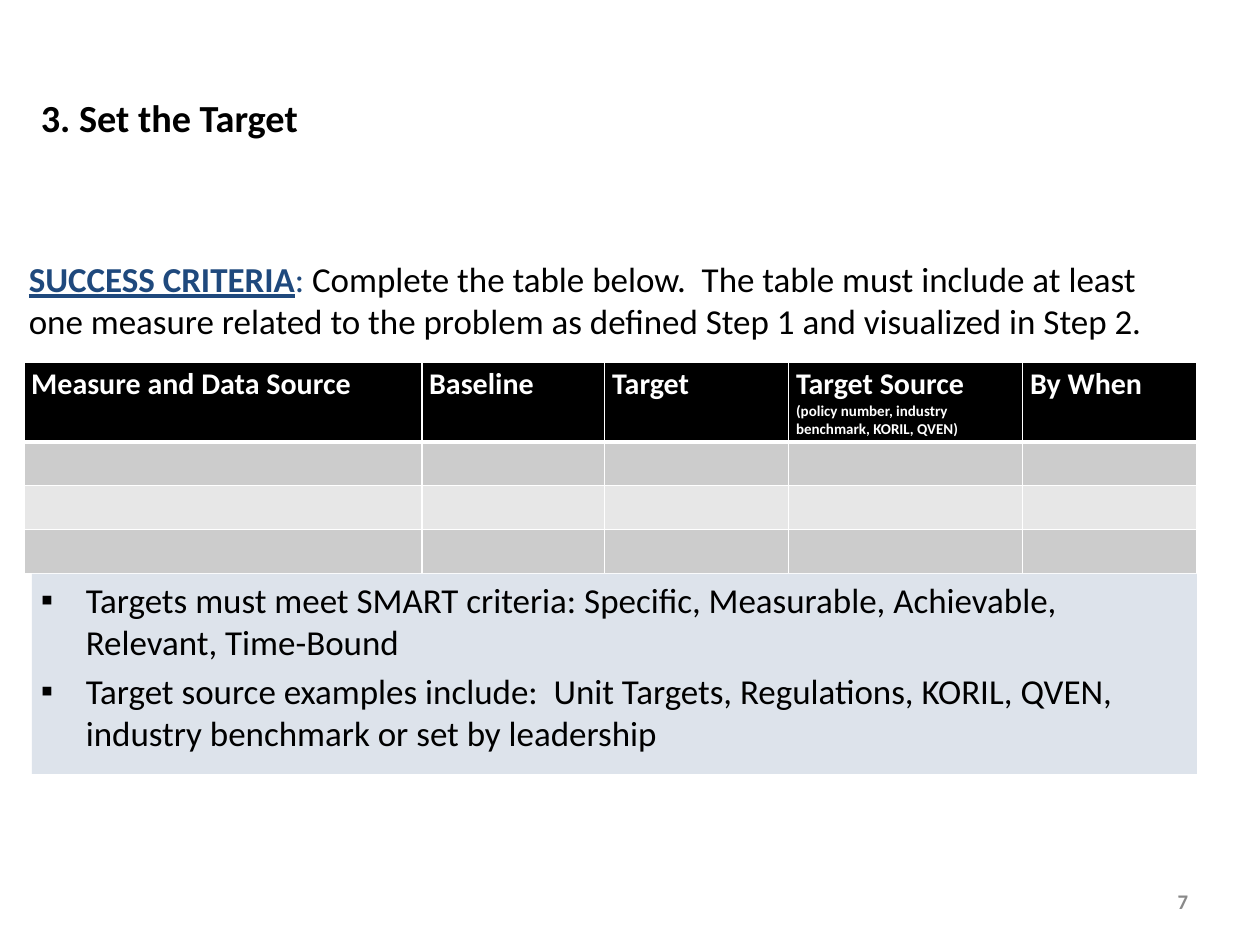
from lxml import etree
from pptx import Presentation
from pptx.dml.color import RGBColor
from pptx.enum import shapes, text
from pptx.oxml import ns
from pptx import util as u

PX = 914400 // 90
FONT = "Calibri"
BLACK = RGBColor(0x00, 0x00, 0x00)
WHITE = RGBColor(0xFF, 0xFF, 0xFF)
NAVY = RGBColor(0x1F, 0x49, 0x7D)
GREY = RGBColor(0x89, 0x89, 0x89)
DARK_BAND = RGBColor(0xCC, 0xCC, 0xCC)
LIGHT_BAND = RGBColor(0xE7, 0xE7, 0xE7)

HEADERS = [["Measure and Data Source"], ["Baseline"], ["Target"],
           ["Target Source", "(policy number, industry benchmark, KORIL, QVEN)"],
           ["By When"]]
COLUMNS = [398, 183, 184, 234, 174]
ROWS = [80, 44, 44, 44]
NOTES = ["Targets must meet SMART criteria: Specific, Measurable, Achievable, "
         "Relevant, Time-Bound",
         "Target source examples include:  Unit Targets, Regulations, KORIL, QVEN, "
         "industry benchmark or set by leadership"]


def px(*values):
    return [u.Emu(v * PX) for v in values]


def sub(parent, tag, **attrs):
    return etree.SubElement(parent, ns.qn(tag), attrs)


class SlideBuilder:
    def __init__(self, slide):
        self.slide = slide

    def style(self, p, size, color, bold=False):
        p.font.name, p.font.size, p.font.bold = FONT, u.Pt(size), bold
        p.font.color.rgb = color

    def text(self, box, runs, size, color, bold=False, anchor="TOP", align="LEFT"):
        """Add a one-paragraph text box and return its runs."""
        tf = self.slide.shapes.add_textbox(*px(*box)).text_frame
        tf.word_wrap = True
        tf.vertical_anchor = text.MSO_ANCHOR[anchor]
        p = tf.paragraphs[0]
        p.alignment = text.PP_ALIGN[align]
        self.style(p, size, color, bold)
        for words in runs:
            p.add_run().text = words
        return p.runs

    def border(self, cell, side, width):
        ln = sub(cell._tc.get_or_add_tcPr(), f"a:{side}", w=str(u.Pt(width)))
        sub(sub(ln, "a:solidFill"), "a:srgbClr", val=str(WHITE))

    def table(self, left, top, columns, rows, headers):
        frame = self.slide.shapes.add_table(
            len(rows), len(columns), *px(left, top, sum(columns), sum(rows)))
        table = frame.table
        for column, width in zip(table.columns, px(*columns)):
            column.width = width
        for i, (row, height) in enumerate(zip(table.rows, px(*rows))):
            row.height = height
            for cell in row.cells:
                cell.margin_left = cell.margin_right = u.Inches(0.08)
                cell.margin_top = cell.margin_bottom = u.Inches(0.04)
                for side in ("lnL", "lnR", "lnT", "lnB"):
                    thick = (i, side) in ((0, "lnB"), (1, "lnT"))
                    self.border(cell, side, 3 if thick else 1)
                cell.fill.solid()
                cell.fill.fore_color.rgb = (
                    BLACK if i == 0 else DARK_BAND if i % 2 else LIGHT_BAND)
        for cell, lines in zip(table.rows[0].cells, headers):
            cell.text = "\n".join(lines)
            for p, size in zip(cell.text_frame.paragraphs, (24, 12)):
                self.style(p, size, WHITE, True)

    def bullet_panel(self, box, items, size):
        sp = self.slide.shapes.add_shape(shapes.MSO_SHAPE.RECTANGLE, *px(*box))
        sp.shadow.inherit = False
        sp.line.fill.background()
        sp.fill.solid()
        sp.fill.fore_color.rgb = NAVY
        color = sp.fill._xPr.find(".//" + ns.qn("a:srgbClr"))
        sub(color, "a:alpha", val="15000")
        tf = sp.text_frame
        tf.word_wrap = True
        tf.vertical_anchor = text.MSO_ANCHOR.TOP
        for i, item in enumerate(items):
            p = tf.add_paragraph() if i else tf.paragraphs[0]
            p.text = item
            p.alignment = text.PP_ALIGN.LEFT
            if i:
                p.space_before = u.Pt(size * 0.2)
            pPr = p._p.get_or_add_pPr()
            indent = u.Inches(0.5)
            pPr.set("marL", str(indent))
            pPr.set("indent", str(-indent))
            sub(pPr, "a:buFont", typeface="Arial")
            sub(pPr, "a:buChar", char="▪")
            self.style(p, size, BLACK)


def main():
    prs = Presentation()
    prs.slide_width, prs.slide_height = u.Inches(14), u.Inches(10.5)
    page = SlideBuilder(prs.slides.add_slide(prs.slide_layouts[6]))

    page.text((32, 38, 934, 158), ["3. Set the Target"], 30.6, BLACK, True, "MIDDLE")
    page.text((1050, 876, 147, 50), ["7"], 16.6, GREY, True, "MIDDLE", "RIGHT")
    label, colon, _ = page.text(
        (20, 253, 1177, 108),
        ["SUCCESS CRITERIA", ": ",
         "Complete the table below.  The table must include at least one measure "
         "related to the problem as defined Step 1 and visualized in Step 2."],
        28, BLACK)
    label.font.bold = label.font.underline = True
    label.font.color.rgb = colon.font.color.rgb = NAVY
    page.table(24, 362, COLUMNS, ROWS, HEADERS)
    page.bullet_panel((32, 574, 1165, 200), NOTES, 28)

    prs.save("out.pptx")


if __name__ == "__main__":
    main()
